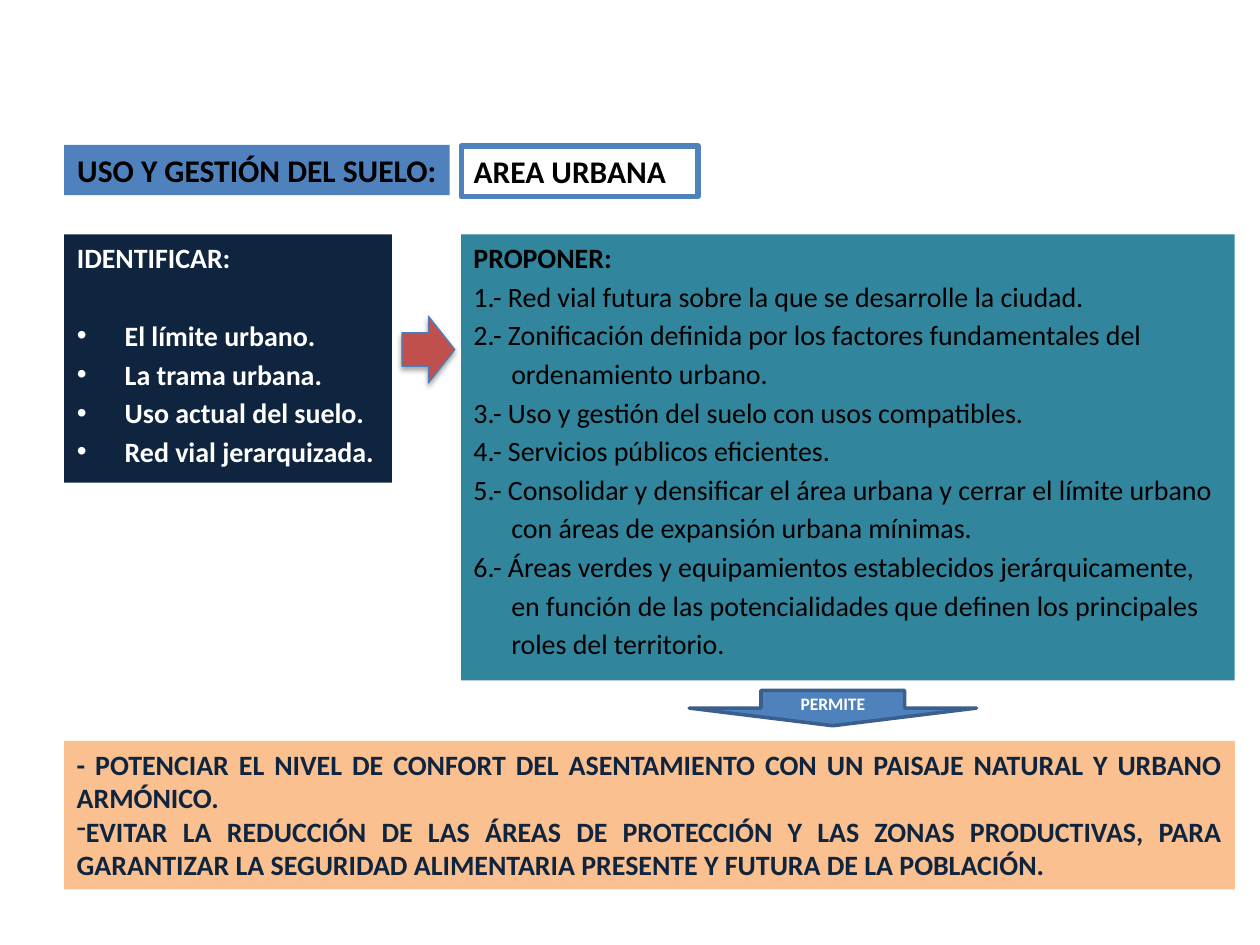
from lxml import etree
from pptx import Presentation
from pptx.dml.color import RGBColor
from pptx.enum.shapes import MSO_SHAPE as Shape
from pptx.enum.text import MSO_ANCHOR as Anchor, MSO_AUTO_SIZE as Fit, PP_ALIGN as Align
from pptx.oxml import parse_xml
from pptx.oxml.ns import nsdecls, qn
from pptx.util import Inches, Pt

NAVY = RGBColor(0x0F, 0x24, 0x3E)
BLUE = RGBColor(0x4F, 0x81, 0xBD)
EDGE = RGBColor(0x3A, 0x5F, 0x8C)
RIM = RGBColor(0x4B, 0x7E, 0xBC)
TEAL = RGBColor(0x31, 0x85, 0x9C)
RED = RGBColor(0xC0, 0x50, 0x4D)
PEACH = RGBColor(0xFA, 0xC0, 0x90)
WHITE = RGBColor(0xFF, 0xFF, 0xFF)
BLACK = RGBColor(0, 0, 0)

LEFT, MID = 0.51, 3.66
GAP = Pt(2.9)

prs = Presentation()
prs.slide_width, prs.slide_height = Inches(10), Inches(7.5)
slide = prs.slides.add_slide(prs.slide_layouts[1])
title, body = slide.placeholders
title.element.getparent().remove(title.element)


def draw(kind, box, fill=None, line=None, width=1):
    shape = slide.shapes.add_shape(kind, *[Inches(n) for n in box])
    shape.shadow.inherit = False
    if fill is None:
        shape.fill.background()
    else:
        shape.fill.solid()
        shape.fill.fore_color.rgb = fill
    if line is None:
        shape.line.fill.background()
    else:
        shape.line.color.rgb = line
        shape.line.width = Pt(width)
    return shape


def write(shape, lines, size, color, align=Align.LEFT, gap=0, anchor=Anchor.TOP):
    frame = shape.text_frame
    frame.word_wrap = True
    frame.auto_size = Fit.NONE
    frame.vertical_anchor = anchor
    frame.text = "\n".join(lines)
    for i, para in enumerate(frame.paragraphs):
        para.alignment = align
        para.space_before = gap if i else 0
        for run in para.runs:
            font = run.font
            font.name, font.size, font.bold = "Calibri", Pt(size), True
            font.color.rgb = color
    return frame.paragraphs


# Left panel: what to identify
body.left, body.top = Inches(LEFT), Inches(1.86)
body.width, body.height = Inches(2.6), Inches(1.97)
body.fill.solid()
body.fill.fore_color.rgb = NAVY
head, *items = write(body, [
    "IDENTIFICAR:",
    "El límite urbano.",
    "La trama urbana.",
    "Uso actual del suelo.",
    "Red vial jerarquizada.",
], 16, WHITE, gap=GAP)
props = head._p.get_or_add_pPr()
props.set("marL", "0")
props.set("indent", "0")
etree.SubElement(props, qn("a:buNone"))
for item in items:
    props = item._p.get_or_add_pPr()
    props.set("marL", str(Inches(0.38)))
    props.set("indent", str(-Inches(0.38)))
    etree.SubElement(props, qn("a:buChar")).set("char", "•")
items[0].space_before = Pt(25.3)

# Arrow down to the results
down = draw(Shape.DOWN_ARROW, (5.47, 5.48, 2.28, 0.28), BLUE, EDGE, 2)
write(down, ["PERMITE"], 10, WHITE, Align.CENTER, anchor=Anchor.MIDDLE)

# Headings
area = draw(Shape.RECTANGLE, (MID, 1.16, 1.88, 0.4), line=BLUE, width=3)
write(area, ["AREA URBANA"], 18, BLACK)
topic = draw(Shape.RECTANGLE, (LEFT, 1.15, 3.06, 0.4), BLUE)
write(topic, ["USO Y GESTIÓN DEL SUELO:"], 18, BLACK, Align.CENTER)

# Right panel: what to propose
plan = draw(Shape.RECTANGLE, (MID, 1.86, 6.14, 3.54), TEAL)
head, *steps = write(plan, [
    "PROPONER:",
    "1.- Red vial futura sobre la que se desarrolle la ciudad.",
    "2.- Zonificación definida por los factores fundamentales del",
    "ordenamiento urbano.",
    "3.- Uso y gestión del suelo con usos compatibles.",
    "4.- Servicios públicos eficientes.",
    "5.- Consolidar y densificar el área urbana y cerrar el límite urbano",
    "con áreas de expansión urbana mínimas.",
    "6.- Áreas verdes y equipamientos establecidos jerárquicamente,",
    "en función de las potencialidades que definen los principales",
    "roles del territorio.",
], 16, BLACK, gap=GAP)
for step in steps:
    step.runs[0].font.bold = False
    if not step.text[0].isdigit():
        step._p.get_or_add_pPr().set("marL", str(Inches(0.3)))

# Arrow between the panels, with a soft shadow
arrow = draw(Shape.RIGHT_ARROW, (3.19, 2.51, 0.42, 0.53), RED, RIM, 0.75)
effect = arrow.element.spPr.find(qn("a:effectLst"))
effect.append(parse_xml(
    f'<a:outerShdw {nsdecls("a")} blurRad="{Pt(3.1)}" dist="{Pt(1.8)}" dir="5400000" '
    'rotWithShape="0"><a:srgbClr val="000000"><a:alpha val="35000"/></a:srgbClr>'
    '</a:outerShdw>'))

# Results
goal = draw(Shape.RECTANGLE, (LEFT, 5.88, 9.29, 1.18), PEACH)
last = write(goal, [
    "- POTENCIAR EL NIVEL DE CONFORT DEL ASENTAMIENTO CON UN PAISAJE NATURAL "
    "Y URBANO ARMÓNICO.",
    "EVITAR LA REDUCCIÓN DE LAS ÁREAS DE PROTECCIÓN Y LAS ZONAS PRODUCTIVAS, PARA "
    "GARANTIZAR LA SEGURIDAD ALIMENTARIA PRESENTE Y FUTURA DE LA POBLACIÓN.",
], 16, NAVY, Align.JUSTIFY)[-1]
etree.SubElement(last._p.get_or_add_pPr(), qn("a:buChar")).set("char", "-")

prs.save("out.pptx")
